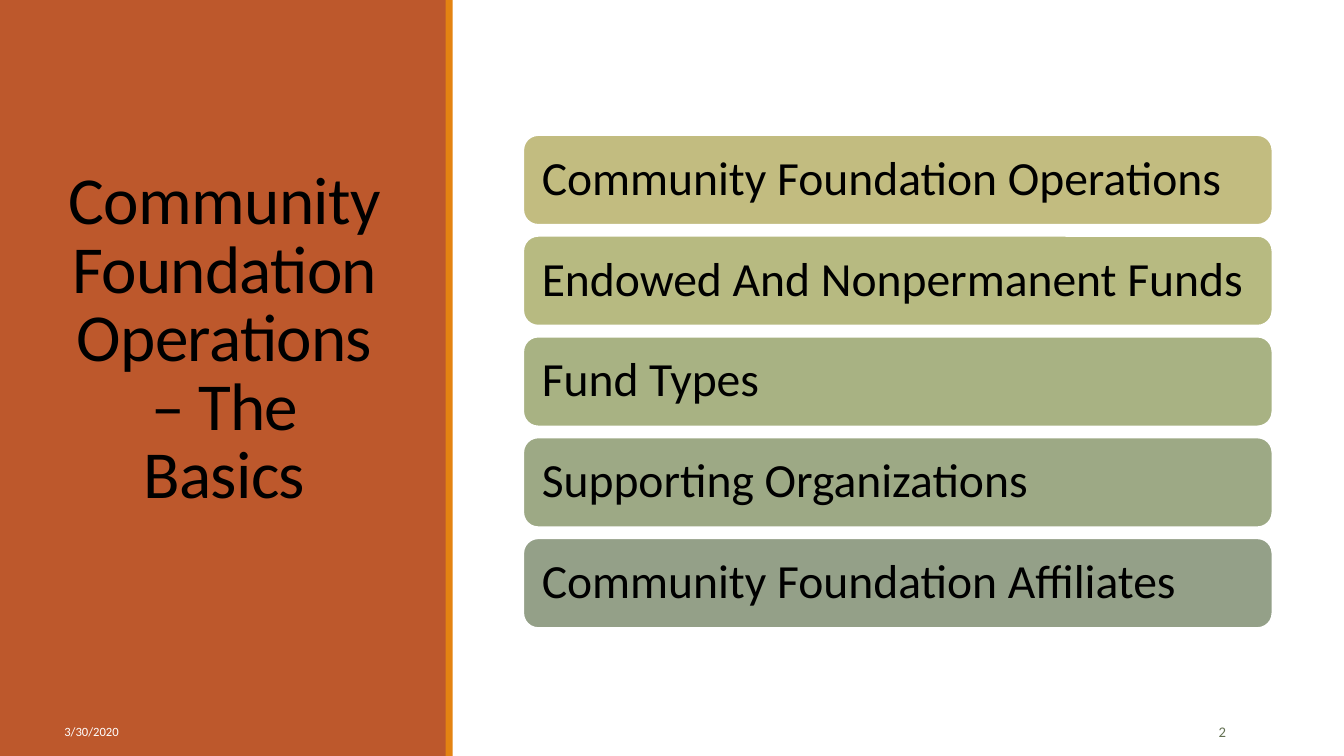
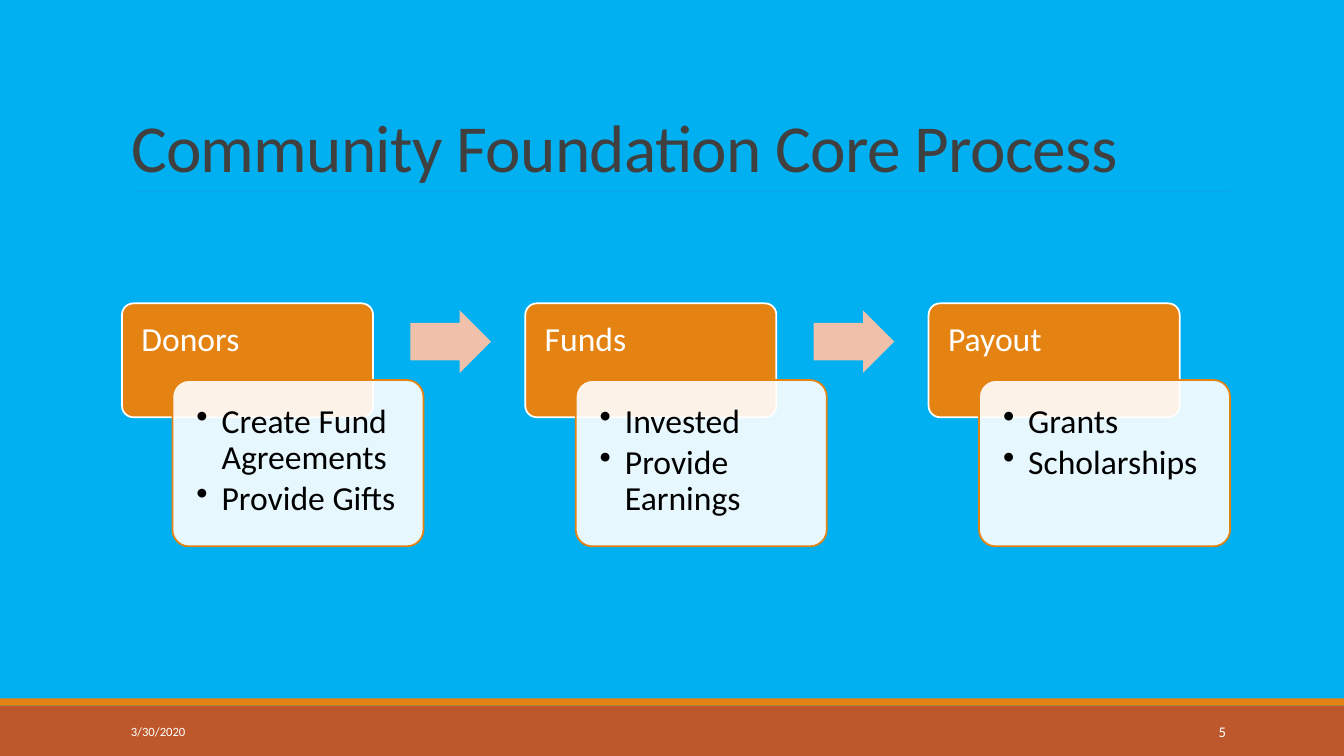
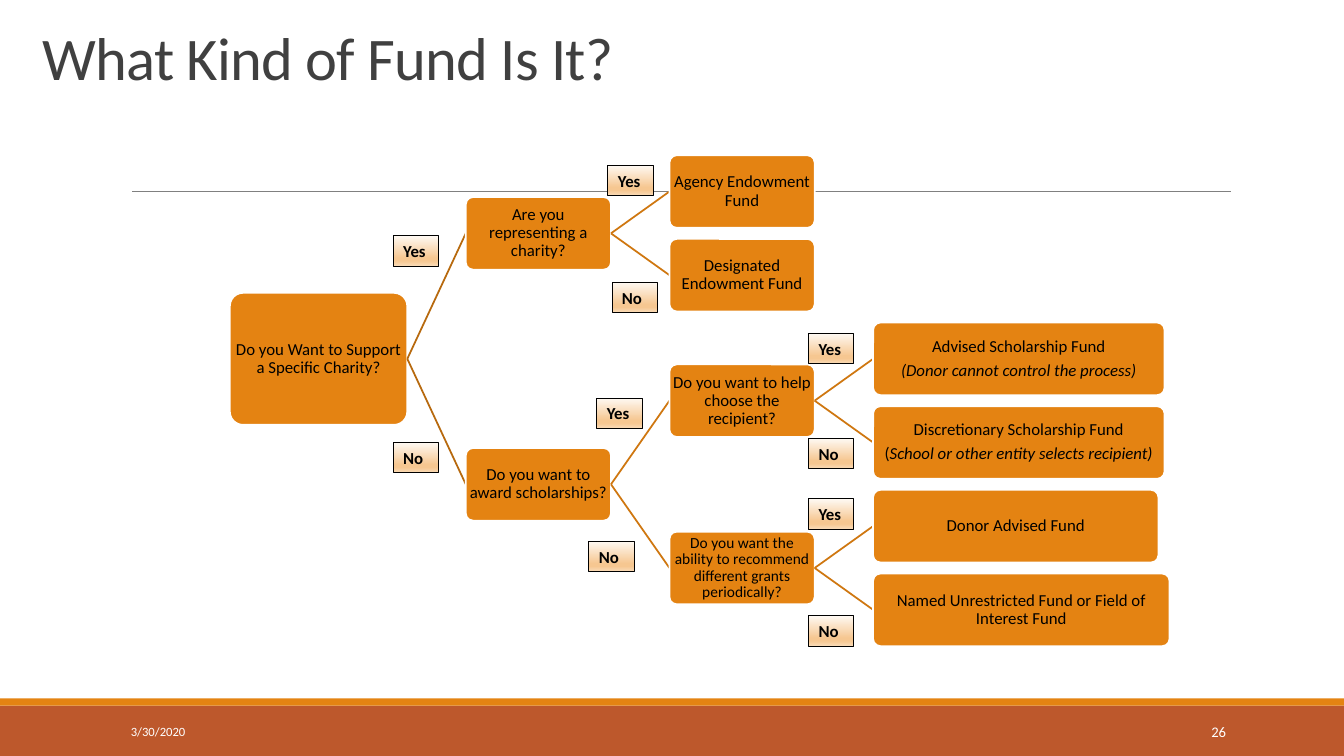
"""Build three slides on community foundation operations."""
import dataclasses

import lxml.etree
import pptx
import pptx.dml.color
import pptx.enum.shapes
import pptx.enum.text
import pptx.oxml.ns
import pptx.util

Inches = pptx.util.Inches
Shape = pptx.enum.shapes.MSO_SHAPE
Align = pptx.enum.text.PP_ALIGN
Anchor = pptx.enum.text.MSO_ANCHOR
qn = pptx.oxml.ns.qn


@dataclasses.dataclass(frozen=True)
class Theme:
    """Colours and type sizes of the deck."""
    font: str = "Calibri"
    white: str = "FFFFFF"
    black: str = "000000"
    sky: str = "00B0F0"
    rust: str = "BD582C"
    orange: str = "E48312"
    peach: str = "EFC1AB"
    heading: str = "404040"
    olive: str = "637052"
    rule: str = "808080"
    sky_rule: str = "08A8E8"
    topics: tuple = ("C2BC80", "B7BA81", "A8B283", "9DA985", "94A088")
    branches: tuple = ("B7690E", "CF7710", "CF7710")
    answer: tuple = ((0, "FEF9F3"), (74, "F6C791"), (83, "F6C791"), (100, "F9DAB6"))
    title_size: float = 48
    small_title_size: float = 43.2
    topic_size: float = 34
    stage_size: float = 24
    tree_size: float = 12
    dense_size: float = 11
    number_size: float = 10.5
    date_size: float = 9
    outline: float = 1.25


@dataclasses.dataclass(frozen=True)
class Choice:
    """A box of the decision tree, with the place of the answer leading to it."""
    paragraphs: tuple
    answer_at: tuple = None
    branches: tuple = ()
    size: tuple = (1.44, 0.72)
    type_size: float = Theme.tree_size
    row: int = None


THEME = Theme()
WIDTH, HEIGHT = 13.33, 7.5
DATE = "3/30/2020"
COLUMNS = (2.28, 4.62, 6.64, 8.66)
FIRST_ROW, ROW_PITCH = 1.9, 0.83

TOPICS = (
    "Community Foundation Operations",
    "Endowed And Nonpermanent Funds",
    "Fund Types",
    "Supporting Organizations",
    "Community Foundation Affiliates",
)
STAGES = (
    ("Donors", ("Create Fund Agreements", "Provide Gifts")),
    ("Funds", ("Invested", "Provide Earnings")),
    ("Payout", ("Grants", "Scholarships")),
)
CHARITY = Choice(("Are you representing a charity?",), (3.9, 2.34), (
    Choice(("Agency Endowment Fund",), (6.03, 1.64), row=0),
    Choice(("Designated Endowment Fund",), (6.07, 2.8), row=1),
))
RECIPIENT = Choice(("Do you want to help choose the recipient?",), (5.92, 3.95), (
    Choice(("Advised Scholarship Fund", (("(Donor cannot control the process)", True),)),
           (8.02, 3.31), size=(2.89, 0.72), row=2),
    Choice(("Discretionary Scholarship Fund",
            (("(", False), ("School or other entity selects recipient)", True))),
           (8.02, 4.35), size=(2.89, 0.72), row=3),
))
GRANTS = Choice(
    ("Do you want the ability to recommend different grants periodically?",), (5.84, 5.37), (
        Choice(("Donor Advised Fund",), (8.02, 4.95), size=(2.83, 0.72), row=4),
        Choice(("Named Unrestricted Fund or Field of Interest Fund",), (8.02, 6.11),
               size=(2.94, 0.72), row=5),
    ), type_size=Theme.dense_size)
SCHOLARSHIPS = Choice(("Do you want to award scholarships?",), (3.9, 4.39), (RECIPIENT, GRANTS))
ROOT = Choice(("Do you Want to Support a Specific Charity?",),
              branches=(CHARITY, SCHOLARSHIPS), size=(1.76, 1.31))


def rgb(code):
    """Return the colour for a hex code."""
    return pptx.dml.color.RGBColor.from_string(code)


def write(frame, paragraphs, size, color=THEME.black, bold=False, align=Align.LEFT,
          anchor=Anchor.MIDDLE, inset=(0.1, 0.05, 0.1, 0.05), line=1.0, after=0,
          bullet=False, tracking=0):
    """Fill a text frame with paragraphs of plain text or of (text, italic) runs."""
    frame.word_wrap = True
    frame.auto_size = pptx.enum.text.MSO_AUTO_SIZE.NONE
    frame.vertical_anchor = anchor
    (frame.margin_left, frame.margin_top,
     frame.margin_right, frame.margin_bottom) = map(Inches, inset)
    for index, content in enumerate(paragraphs):
        paragraph = frame.add_paragraph() if index else frame.paragraphs[0]
        paragraph.alignment = align
        paragraph.line_spacing = line
        paragraph.space_after = pptx.util.Pt(size * after)
        if bullet:
            properties = paragraph._p.get_or_add_pPr()
            properties.set("marL", str(Inches(0.25)))
            properties.set("indent", str(Inches(-0.25)))
            lxml.etree.SubElement(properties, qn("a:buChar")).set("char", "•")
        runs = ((content, False),) if isinstance(content, str) else content
        for text, italic in runs:
            run = paragraph.add_run()
            run.text = text
            font = run.font
            font.name, font.size = THEME.font, pptx.util.Pt(size)
            font.bold, font.italic = bold, italic
            font.color.rgb = rgb(color)
            if tracking:
                run._r.get_or_add_rPr().set("spc", str(round(tracking * 100)))


def add_box(slide, kind, left, top, width, height, fill, outline=None,
            weight=THEME.outline, adjust=()):
    """Add a flat preset shape."""
    box = slide.shapes.add_shape(kind, *map(Inches, (left, top, width, height)))
    box.shadow.inherit = False
    box.fill.solid()
    box.fill.fore_color.rgb = rgb(fill)
    if outline:
        box.line.color.rgb = rgb(outline)
        box.line.width = pptx.util.Pt(weight)
    else:
        box.line.fill.background()
    for index, value in enumerate(adjust):
        box.adjustments[index] = value
    return box


def add_line(slide, start, end, color, weight):
    """Add a straight line without a shadow."""
    line = slide.shapes.add_connector(
        pptx.enum.shapes.MSO_CONNECTOR.STRAIGHT, *map(Inches, (*start, *end)))
    line.line.color.rgb = rgb(color)
    line.line.width = pptx.util.Pt(weight)
    lxml.etree.SubElement(line.element.spPr, qn("a:effectLst"))


def add_text(slide, left, top, width, height, text, **style):
    """Add a text box."""
    area = slide.shapes.add_textbox(*map(Inches, (left, top, width, height)))
    write(area.text_frame, (text,), **style)


def new_slide(deck, background):
    """Add a title-only slide with a plain background."""
    slide = deck.slides.add_slide(deck.slide_layouts[5])
    slide.background.fill.solid()
    slide.background.fill.fore_color.rgb = rgb(background)
    return slide


def set_title(slide, text, place, size=THEME.title_size, color=THEME.heading, **style):
    """Place and format the title in front of what is already drawn."""
    title = slide.shapes.title
    slide.shapes.element.append(title.element)
    title.left, title.top, title.width, title.height = map(Inches, place)
    write(title.text_frame, (text,), size, color, line=0.85, tracking=-0.5, **style)


def add_bands(slide, rule):
    """Draw the bottom bands and the rule under the title."""
    add_box(slide, Shape.RECTANGLE, 0, 7, WIDTH, 0.5, THEME.rust)
    add_box(slide, Shape.RECTANGLE, 0, 6.93, WIDTH, 0.07, THEME.orange)
    add_line(slide, (1.31, 1.9), (12.21, 1.9), rule, 0.5)


def add_footer(slide, number, date_left=1.2, number_color=THEME.white):
    """Write the date and the slide number."""
    add_text(slide, date_left, 7.06, 2.7, 0.4, DATE, size=THEME.date_size, color=THEME.white)
    add_text(slide, 10.83, 7.06, 1.43, 0.4, str(number), size=THEME.number_size,
             color=number_color, align=Align.RIGHT)


def add_stage(slide, left, name, duties):
    """Draw one stage of the process with its duties."""
    heading = add_box(slide, Shape.ROUNDED_RECTANGLE, left, 3.01, 2.49, 1.13,
                      THEME.orange, THEME.white, adjust=(0.1,))
    write(heading.text_frame, (name,), THEME.stage_size, THEME.white, anchor=Anchor.TOP,
          inset=(0.16, 0.16, 0.16, 0.1), line=0.9, after=0.35)
    card = add_box(slide, Shape.ROUNDED_RECTANGLE, left + 0.5, 3.77, 2.49, 1.65,
                   THEME.white, THEME.orange, adjust=(0.1,))
    tint = card.element.spPr.find(qn("a:solidFill"))[0]
    lxml.etree.SubElement(tint, qn("a:alpha")).set("val", "90000")
    write(card.text_frame, duties, THEME.stage_size, anchor=Anchor.TOP,
          inset=(0.19,) * 4, line=0.9, after=0.15, bullet=True)


def add_answer(slide, text, place):
    """Draw a shaded Yes or No label."""
    label = add_box(slide, Shape.RECTANGLE, *place, 0.45, 0.3, THEME.white, THEME.black, 0.75)
    label.fill.gradient()
    label.fill.gradient_angle = 270
    stops = label.element.spPr.find(".//" + qn("a:gsLst"))
    for stop in list(stops):
        stops.remove(stop)
    for position, color in THEME.answer:
        stop = lxml.etree.SubElement(stops, qn("a:gs"), pos=str(position * 1000))
        lxml.etree.SubElement(stop, qn("a:srgbClr"), val=color)
    write(label.text_frame, (text,), THEME.tree_size, bold=True)


def middle(choice):
    """Return the height at which a choice is centred."""
    if choice.branches:
        return sum(map(middle, choice.branches)) / len(choice.branches)
    return FIRST_ROW + choice.row * ROW_PITCH


def add_choice(slide, choice, depth=0):
    """Draw a choice and everything that branches from it."""
    left, center = COLUMNS[depth], middle(choice)
    width, height = choice.size
    box = add_box(slide, Shape.ROUNDED_RECTANGLE, left, center - height / 2, width, height,
                  THEME.orange, THEME.white, adjust=(0.1,))
    write(box.text_frame, choice.paragraphs, choice.type_size, align=Align.CENTER,
          inset=(0.01,) * 4, line=0.9, after=0.35)
    for answer, branch in zip(("Yes", "No"), choice.branches):
        add_line(slide, (left + width, center), (COLUMNS[depth + 1], middle(branch)),
                 THEME.branches[depth], THEME.outline)
        add_choice(slide, branch, depth + 1)
        add_answer(slide, answer, branch.answer_at)


def build_basics(deck):
    """Build the list of topics beside the title panel."""
    slide = new_slide(deck, THEME.white)
    add_box(slide, Shape.RECTANGLE, 0, 0, 4.43, HEIGHT, THEME.rust)
    add_box(slide, Shape.RECTANGLE, 4.42, 0, 0.07, HEIGHT, THEME.orange)
    set_title(slide, "Community Foundation Operations – The Basics", (0.54, 0.57, 3.37, 6.31),
              color=THEME.black, align=Align.CENTER, inset=(0.1, 0.05, 0.1, 0.73))
    add_footer(slide, 2, date_left=0.54, number_color=THEME.olive)
    for index, (topic, color) in enumerate(zip(TOPICS, THEME.topics)):
        bar = add_box(slide, Shape.ROUNDED_RECTANGLE, 5.19, 1.34 + index, 7.43, 0.89,
                      color, THEME.white)
        write(bar.text_frame, (topic,), THEME.topic_size, inset=(0.14,) * 4,
              line=0.9, after=0.35)


def build_process(deck):
    """Build the three stages of the core process."""
    slide = new_slide(deck, THEME.sky)
    add_bands(slide, THEME.sky_rule)
    set_title(slide, "Community Foundation Core Process", (1.2, 0.31, 11, 1.59),
              anchor=Anchor.BOTTOM)
    for index, (name, duties) in enumerate(STAGES):
        left = 1.21 + index * 4
        add_stage(slide, left, name, duties)
        if index < len(STAGES) - 1:
            add_box(slide, Shape.RIGHT_ARROW, left + 2.86, 3.08, 0.8, 0.62,
                    THEME.peach, adjust=(0.6, 0.5))
    add_footer(slide, 5)


def build_decision(deck):
    """Build the decision tree of fund kinds."""
    slide = new_slide(deck, THEME.white)
    add_bands(slide, THEME.rule)
    set_title(slide, "What Kind of Fund Is It?", (0.32, 0.2, 11, 0.77),
              size=THEME.small_title_size, anchor=Anchor.BOTTOM)
    add_choice(slide, ROOT)
    add_footer(slide, 26)


def main():
    """Build and save the deck."""
    deck = pptx.Presentation()
    deck.slide_width, deck.slide_height = Inches(WIDTH), Inches(HEIGHT)
    build_basics(deck)
    build_process(deck)
    build_decision(deck)
    deck.save("out.pptx")


if __name__ == "__main__":
    main()
